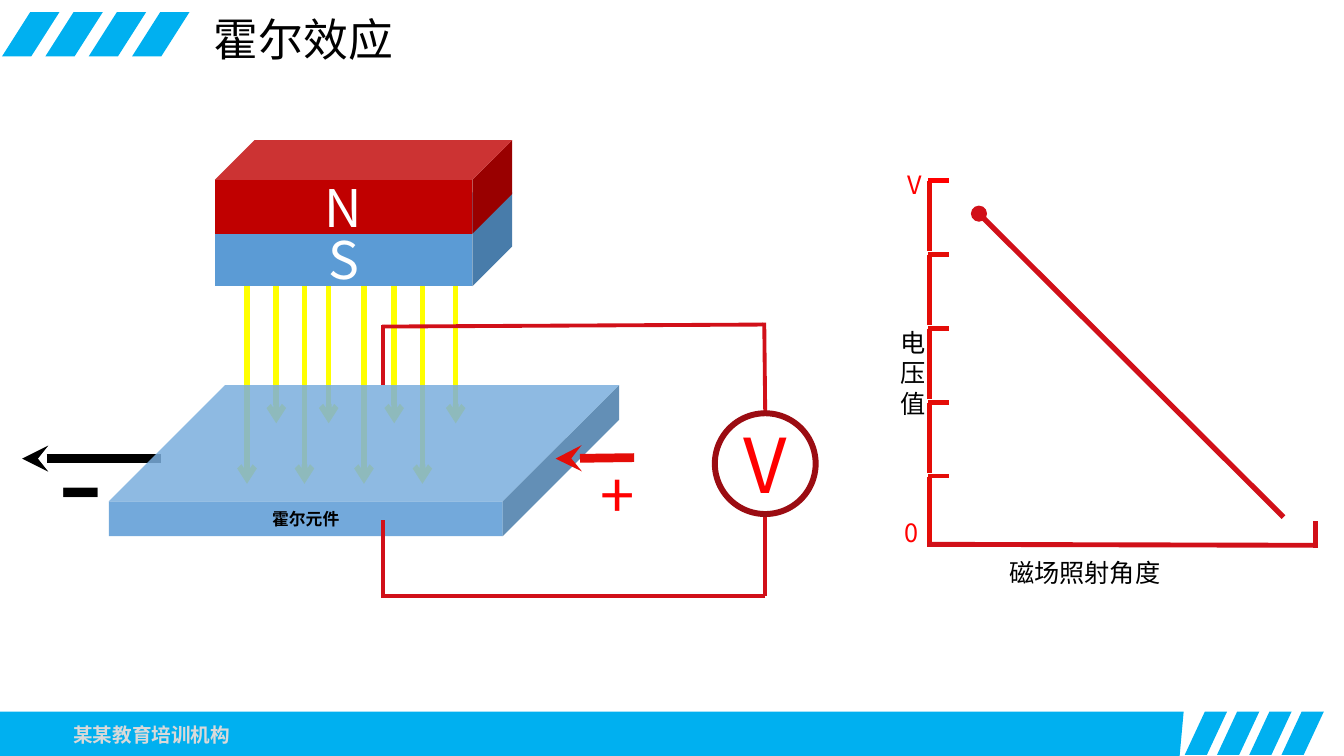
from pptx import Presentation
from pptx.dml.color import RGBColor
from pptx.enum.shapes import MSO_CONNECTOR, MSO_SHAPE
from pptx.enum.text import MSO_ANCHOR, PP_ALIGN
from pptx.oxml.ns import qn
from pptx.util import Inches, Pt
from lxml.etree import SubElement

FONT = "Noto Sans CJK SC"
WHITE = RGBColor(0xFF, 0xFF, 0xFF)
BLACK = RGBColor(0, 0, 0)
GREY = RGBColor(0xD9, 0xD9, 0xD9)
CYAN = RGBColor(0x00, 0xB0, 0xF0)
BLUE = RGBColor(0x5B, 0x9B, 0xD5)
YELLOW = RGBColor(0xFF, 0xFF, 0x00)
RED = RGBColor(0xFF, 0x00, 0x00)
NORTH = RGBColor(0xC0, 0x00, 0x00)
WIRE = RGBColor(0xD1, 0x10, 0x19)
AXIS = RGBColor(0xE4, 0x0D, 0x08)
RIM = RGBColor(0x9B, 0x0C, 0x12)


def write(shape, words, size, color, bold=False, align=PP_ALIGN.CENTER):
    para = shape.text_frame.paragraphs[0]
    para.alignment = align
    run = para.add_run()
    run.text = words
    font = run.font
    font.size, font.bold, font.name = Pt(size), bold, FONT
    font.color.rgb = color
    SubElement(font._element, qn("a:ea")).set("typeface", FONT)


def label(slide, box, words, size, color, wrap=True):
    shape = slide.shapes.add_textbox(*map(Inches, box))
    shape.text_frame.word_wrap = wrap
    write(shape, words, size, color, align=PP_ALIGN.LEFT)


def solid(slide, kind, box, fill=None):
    shape = slide.shapes.add_shape(kind, *map(Inches, box))
    shape.shadow.inherit = False
    shape.line.fill.background()
    if fill is None:
        shape.fill.background()
    else:
        shape.fill.solid()
        shape.fill.fore_color.rgb = fill
    shape.text_frame.vertical_anchor = MSO_ANCHOR.MIDDLE
    return shape


def cube(slide, box, depth, fill, words, size, color, bold=False):
    shape = solid(slide, MSO_SHAPE.CUBE, box, fill)
    shape.adjustments[0] = depth
    write(shape, words, size, color, bold)
    return shape


def outline(slide, points):
    points = [(Inches(x), Inches(y)) for x, y in points]
    maker = slide.shapes.build_freeform(*points[0], scale=1.0)
    maker.add_line_segments(points[1:], close=True)
    shape = maker.convert_to_shape()
    shape.shadow.inherit = False
    shape.fill.solid()
    shape.fill.fore_color.rgb = CYAN
    shape.line.fill.background()


def line(slide, ends, color, width, head=None, tail=None):
    rule = slide.shapes.add_connector(MSO_CONNECTOR.STRAIGHT, *map(Inches, ends))
    rule.line.color.rgb = color
    rule.line.width = Pt(width)
    stroke = rule.line._get_or_add_ln()
    for tag, kind in (("a:headEnd", head), ("a:tailEnd", tail)):
        if kind:
            SubElement(stroke, qn(tag)).set("type", kind)
    SubElement(rule._element.spPr, qn("a:effectLst"))


def stripes(slide, box, step, lean):
    """Four slanted bars, the first of them in the given box."""
    x, y, w, h = box
    for n in range(4):
        a = x + n * step
        outline(slide, [(a + lean, y), (a, y + h), (a + w - lean, y + h), (a + w, y)])


def header(slide, x, y):
    stripes(slide, (x + 0.02, y + 0.12, 0.57, 0.44), 0.43, 0.28)
    label(slide, (x + 2.02, y + 0.07, 6.32, 0.64), "霍尔效应", 32, BLACK)


def footer(slide, x, y):
    stripes(slide, (x + 11.75, y, 0.42, 0.43), 0.32, 0.2)
    outline(slide, [(x, y), (x + 11.74, y), (x + 11.7, y + 0.44), (x, y + 0.44)])
    name = slide.shapes.add_textbox(*map(Inches, (x + 0.56, y + 0.05, 1.89, 0.36)))
    name.text_frame.word_wrap = True
    name.text_frame.vertical_anchor = MSO_ANCHOR.MIDDLE
    write(name, "某某教育培训机构", 14, GREY, bold=True)


def magnet(slide, x, y):
    # Field lines: front row long, back row short
    for reach, row in ((3.41, (0.32, 0.89, 1.48, 2.06)),
                       (2.81, (2.39, 1.78, 1.13, 0.61))):
        for dx in row:
            line(slide, (x + dx, y + 1.43, x + dx, y + reach), YELLOW, 4, tail="arrow")
    # Poles
    cube(slide, (x, y + 0.52, 2.95, 0.93), 0.425, BLUE, "S", 37, WHITE)
    cube(slide, (x, y, 2.95, 0.93), 0.425, NORTH, "N", 37, WHITE)


def plate(slide, x, y):
    # Current out, Hall element, current in
    line(slide, (x - 0.86, y + 0.73, x + 0.52, y + 0.73), BLACK, 6.25, head="stealth")
    body = cube(slide, (x, y, 5.06, 1.5), 0.769, BLUE, "霍尔元件", 12, BLACK, True)
    tint = body.fill._xPr.find(qn("a:solidFill"))[0]
    SubElement(tint, qn("a:alpha")).set("val", "85000")
    line(slide, (x + 4.43, y + 0.73, x + 5.21, y + 0.72), AXIS, 6.25, head="stealth")
    label(slide, (x + 4.78, y + 0.66, 0.5, 0.84), "+", 44, RED, False)
    label(slide, (x - 0.61, y + 0.06, 0.61, 1.72), "-", 96, BLACK, False)


def circuit(slide, x, y):
    for a, b, c, d in ((0, 1.96, 0, 2.73), (0, 0.02, 0, 0.62),
                       (3.77, 0.02, -0.01, 0.04), (3.79, 2.71, 0, 2.71),
                       (3.78, 0, 3.79, 0.92), (3.79, 1.9, 3.79, 2.71)):
        line(slide, (x + a, y + b, x + c, y + d), WIRE, 2.75)
    # Voltmeter
    meter = solid(slide, MSO_SHAPE.OVAL, (x + 3.29, y + 0.9, 1, 1))
    meter.line.color.rgb = RIM
    meter.line.width = Pt(4.25)
    write(meter, "V", 54, RED)


def graph(slide, x, y):
    # Vertical axis: five pieces, each with a tick on top
    for n in range(5):
        top = y + n * 0.733
        line(slide, (x, top + 0.01, x, top + 0.7), AXIS, 3.5)
        line(slide, (x + 0.19, top, x - 0.02, top), AXIS if n else RED, 3.5)
    # Horizontal axis and its end mark
    line(slide, (x + 3.83, y + 3.62, x - 0.02, y + 3.61), WIRE, 3.5)
    line(slide, (x + 3.83, y + 3.38, x + 3.83, y + 3.65), WIRE, 3.5)
    # Voltage curve
    line(slide, (x + 3.51, y + 3.34, x + 0.48, y + 0.32), WIRE, 3.75)
    solid(slide, MSO_SHAPE.OVAL, (x + 0.41, y + 0.25, 0.16, 0.16), WIRE)
    # Labels
    label(slide, (x - 0.32, y - 0.16, 0.34, 0.4), "V", 18, RED, False)
    label(slide, (x - 0.35, y + 3.29, 0.33, 0.4), "0", 18, RED, False)
    label(slide, (x - 0.39, y + 1.41, 0.29, 1.01), "电压值", 18, BLACK)
    label(slide, (x + 0.69, y + 3.69, 1.84, 0.4), "磁场照射角度", 18, BLACK)


def main():
    deck = Presentation()
    deck.slide_width, deck.slide_height = Inches(13.33), Inches(7.5)
    slide = deck.slides.add_slide(deck.slide_layouts[6])
    slide.background.fill.solid()
    slide.background.fill.fore_color.rgb = WHITE
    footer(slide, 0, 7.06)
    header(slide, 0, 0)
    magnet(slide, 2.13, 1.39)
    plate(slide, 1.08, 3.82)
    circuit(slide, 3.8, 3.2)
    graph(slide, 9.22, 1.79)
    deck.save("out.pptx")


if __name__ == "__main__":
    main()
